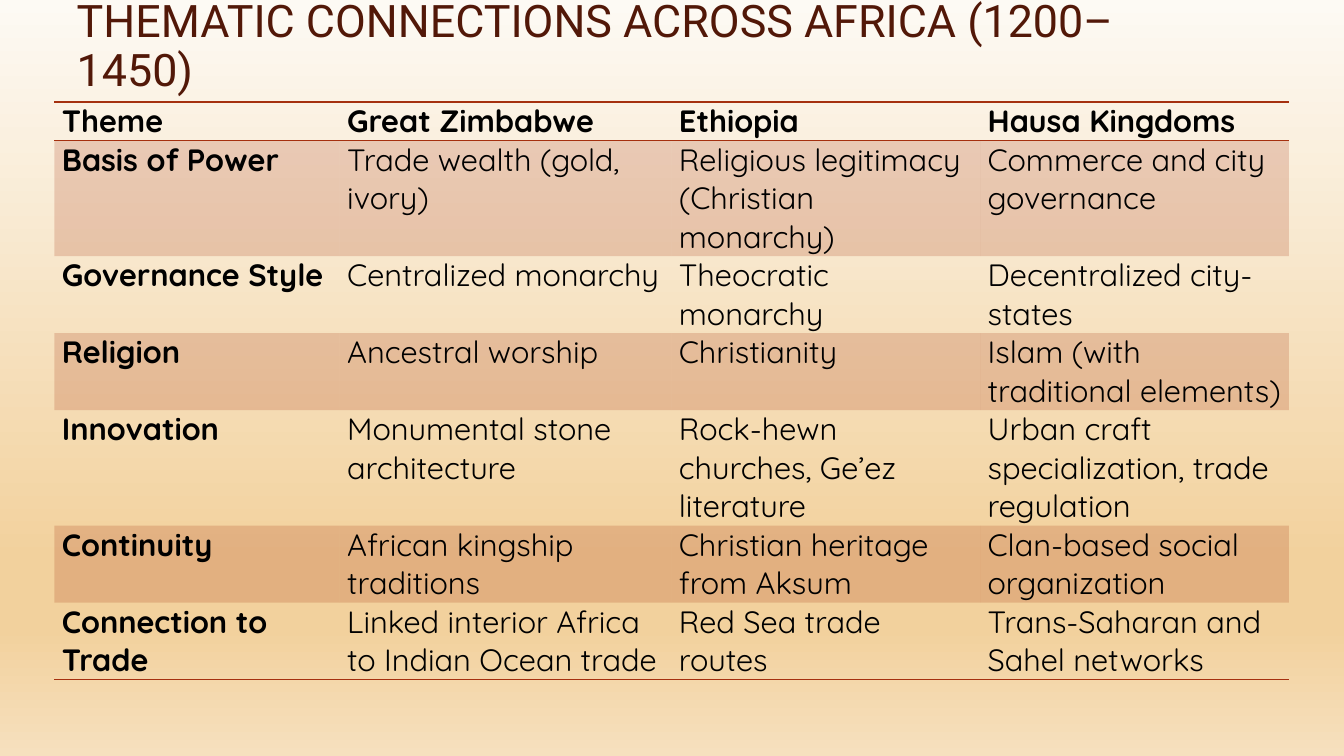
"""Build a slide with a table comparing three African states by theme."""
from lxml import etree
from pptx import Presentation
from pptx.dml.color import RGBColor
from pptx.enum import text
from pptx.oxml import ns
from pptx.util import Cm, Pt

BLACK = RGBColor(0x00, 0x00, 0x00)
BROWN = RGBColor(0x52, 0x18, 0x08)
RUST = RGBColor(0xA5, 0x30, 0x0F)
SAND = RGBColor(0xF2, 0xD1, 0x9D)
CREAM = RGBColor(0xFD, 0xFA, 0xF4)
PALE_SAND = RGBColor(0xF6, 0xE0, 0xBE)
BACKGROUND_STOPS = [(0, CREAM), (74, SAND), (83, SAND), (100, PALE_SAND)]
NO_GRID_STYLE = "{2D5ABB26-0587-4C30-8999-92F81FD0307C}"

COLUMN_WIDTHS = [7.19, 8.36, 7.78, 7.78]
LINE_HEIGHT = 0.97
ROWS = [
    (1, "Theme", "Great Zimbabwe", "Ethiopia", "Hausa Kingdoms"),
    (3, "Basis of Power", "Trade wealth (gold, ivory)",
     "Religious legitimacy (Christian monarchy)", "Commerce and city governance"),
    (2, "Governance Style", "Centralized monarchy", "Theocratic monarchy",
     "Decentralized city-states"),
    (2, "Religion", "Ancestral worship", "Christianity",
     "Islam (with traditional elements)"),
    (3, "Innovation", "Monumental stone architecture",
     "Rock-hewn churches, Ge’ez literature",
     "Urban craft specialization, trade regulation"),
    (2, "Continuity", "African kingship traditions",
     "Christian heritage from Aksum", "Clan-based social organization"),
    (2, "Connection to Trade", "Linked interior Africa to Indian Ocean trade",
     "Red Sea trade routes", "Trans-Saharan and Sahel networks"),
]


def add_child(parent, tag, **attributes):
    return etree.SubElement(parent, ns.qn(tag), attributes)


def add_border(cell, tag):
    line = add_child(cell._tc.get_or_add_tcPr(), tag, w=str(Pt(1)))
    add_child(add_child(line, "a:solidFill"), "a:srgbClr", val=str(RUST))


deck = Presentation()
deck.slide_width, deck.slide_height = Cm(33.87), Cm(19.05)
page = deck.slides.add_slide(deck.slide_layouts[5])

backdrop = page.background.fill
backdrop.gradient()
backdrop.gradient_angle = 270
stops = page.background._cSld.find(".//" + ns.qn("a:gsLst"))
for stop in list(stops):
    stops.remove(stop)
for percent, color in BACKGROUND_STOPS:
    stop = add_child(stops, "a:gs", pos=str(percent * 1000))
    add_child(stop, "a:srgbClr", val=str(color))

title = page.shapes.title
title.left, title.top, title.width, title.height = Cm(1.68), Cm(0.76), Cm(29.41), Cm(1.78)
frame = title.text_frame
frame.text = "THEMATIC CONNECTIONS ACROSS AFRICA (1200–1450)"
frame.word_wrap = True
frame.auto_size = text.MSO_AUTO_SIZE.NONE
frame.vertical_anchor = text.MSO_ANCHOR.BOTTOM
para = frame.paragraphs[0]
para.alignment = text.PP_ALIGN.LEFT
para.line_spacing = 0.9
font = para.runs[0].font
font.name, font.size, font.color.rgb = "Roboto", Pt(32), BROWN

line_total = sum(row[0] for row in ROWS)
table = page.shapes.add_table(
    len(ROWS), len(COLUMN_WIDTHS), Cm(1.37), Cm(2.57),
    Cm(sum(COLUMN_WIDTHS)), Cm(LINE_HEIGHT * line_total)).table
table.horz_banding = False
table._tbl.tblPr.find(ns.qn("a:tableStyleId")).text = NO_GRID_STYLE
for column, width in zip(table.columns, COLUMN_WIDTHS):
    column.width = Cm(width)

for row_index, (line_count, *words) in enumerate(ROWS):
    table.rows[row_index].height = Cm(LINE_HEIGHT * line_count)
    for column_index, wording in enumerate(words):
        cell = table.cell(row_index, column_index)
        cell.margin_left = cell.margin_right = Cm(0.19)
        cell.margin_top = cell.margin_bottom = 0
        cell.text_frame.text = wording
        font = cell.text_frame.paragraphs[0].runs[0].font
        font.name, font.size, font.color.rgb = "Quicksand", Pt(22), BLACK
        font.bold = row_index == 0 or column_index == 0

        if row_index == 0:
            add_border(cell, "a:lnT")
        if row_index in (0, len(ROWS) - 1):
            add_border(cell, "a:lnB")
        if row_index % 2:
            cell.fill.solid()
            cell.fill.fore_color.rgb = RUST
            tint = cell._tc.tcPr.find(ns.qn("a:solidFill")).find(ns.qn("a:srgbClr"))
            add_child(tint, "a:alpha", val="20000")
        else:
            cell.fill.background()

deck.save("out.pptx")
